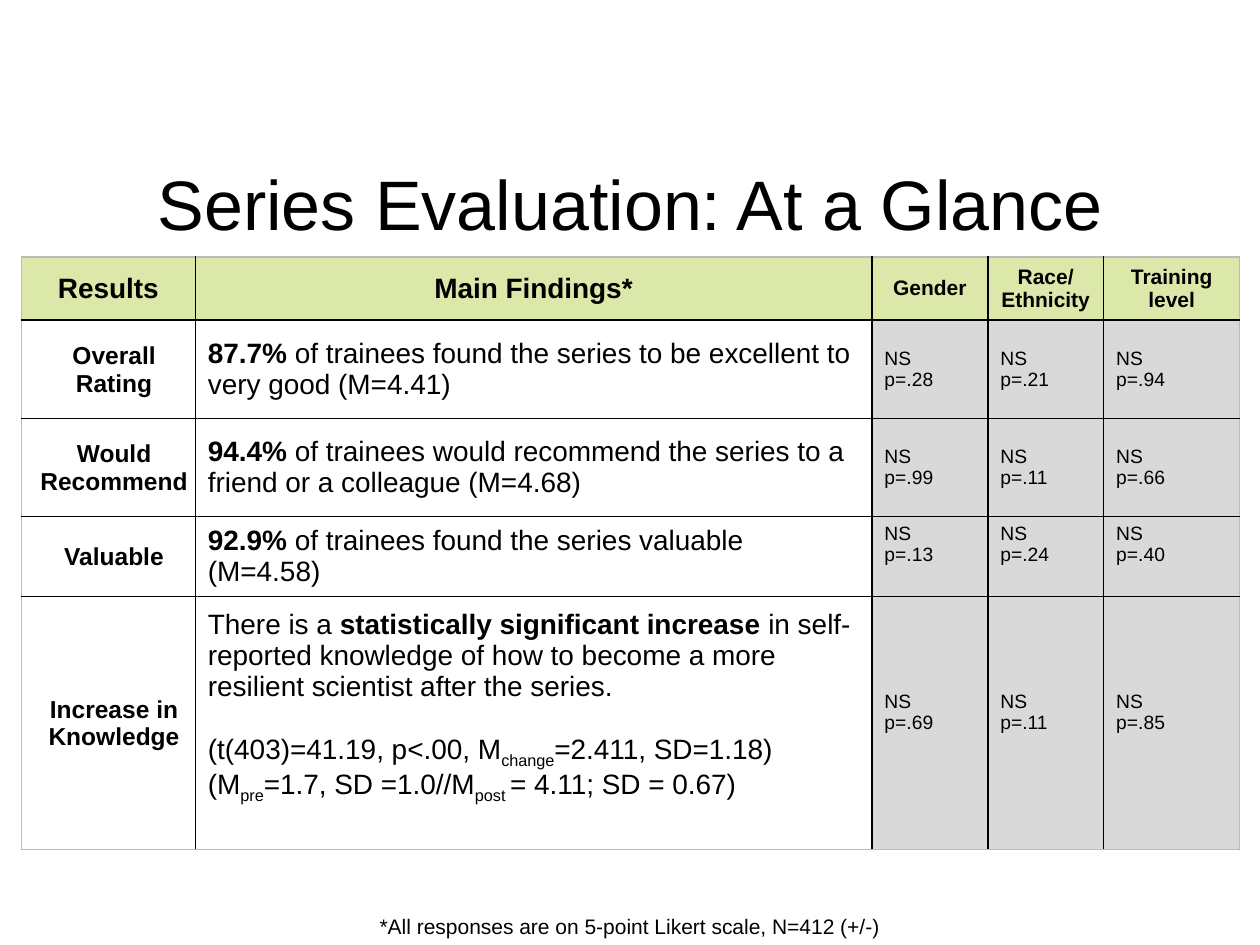
from lxml.etree import SubElement
from pptx import Presentation
from pptx.dml.color import RGBColor
from pptx.enum.text import MSO_ANCHOR, PP_ALIGN
from pptx.oxml.ns import qn
from pptx.util import Inches, Pt

BLACK = RGBColor(0x00, 0x00, 0x00)
FRAME_GREY = RGBColor(0xBB, 0xBB, 0xBB)
HEADER_GREEN = RGBColor(0xDB, 0xE8, 0xAA)
CELL_GREY = RGBColor(0xD9, 0xD9, 0xD9)

GRID_COLUMNS, GRID_ROWS = 100, 75
BOLD, SUBSCRIPT = "bold", "subscript"

COLUMN_WIDTHS = [13.8, 53.7, 9.2, 9.2, 10.8]
ROW_HEIGHTS = [4.8, 7.8, 7.8, 6.1, 19]
HEADERS = [(["Results"], 16), (["Main Findings*"], 16), (["Gender"], 12),
           (["Race/", "Ethnicity"], 12), (["Training level"], 12)]

# Label, finding as paragraphs of (text, style) spans, p values by group
RESULTS = [
    ("Overall Rating",
     [[("87.7% ", BOLD),
       ("of trainees found the series to be excellent to very good (M=4.41)", None)]],
     [".28", ".21", ".94"]),
    ("Would Recommend",
     [[("94.4% ", BOLD),
       ("of trainees would recommend the series to a friend or a colleague (M=4.68)", None)]],
     [".99", ".11", ".66"]),
    ("Valuable",
     [[("92.9% ", BOLD), ("of trainees found the series valuable (M=4.58)", None)]],
     [".13", ".24", ".40"]),
    ("Increase in Knowledge",
     [[("There is a ", None), ("statistically significant increase ", BOLD),
       ("in self-reported knowledge of how to become a more resilient scientist "
        "after the series.", None)],
      [("(t(403)=41.19, p<.00, M", None), ("change", SUBSCRIPT),
       ("=2.411, SD=1.18)", None)],
      [("(M", None), ("pre", SUBSCRIPT), ("=1.7, SD =1.0//M", None),
       ("post ", SUBSCRIPT), ("= 4.11; SD = 0.67)", None)]],
     [".69", ".11", ".85"]),
]


def plain(lines, style=None):
    """Turn lines into paragraphs of one span each."""
    return [[(line, style)] for line in lines]


class SlideBuilder:
    """Holds the deck's style and current page; lengths are grid units."""

    font_name = "Arial"
    text_color = BLACK

    def __init__(self, deck):
        self.page = deck.slides.add_slide(deck.slide_layouts[6])
        self.column = deck.slide_width / GRID_COLUMNS
        self.row = deck.slide_height / GRID_ROWS

    def place(self, left, top, width, height):
        return (round(left * self.column), round(top * self.row),
                round(width * self.column), round(height * self.row))

    def fill_text(self, frame, paragraphs, size, align=PP_ALIGN.LEFT):
        for index, spans in enumerate(paragraphs):
            para = frame.add_paragraph() if index else frame.paragraphs[0]
            para.alignment = align
            for text, style in spans:
                span = para.add_run()
                span.text = text
                values = {"name": self.font_name, "size": Pt(size), "bold": style == BOLD}
                for name, value in values.items():
                    setattr(span.font, name, value)
                span.font.color.rgb = self.text_color
                if style == SUBSCRIPT:
                    span.font._element.set("baseline", "-25000")

    def text(self, area, content, size, bottom=0.05):
        box = self.page.shapes.add_textbox(*self.place(*area))
        frame = box.text_frame
        values = {"word_wrap": True, "vertical_anchor": MSO_ANCHOR.MIDDLE,
                  "margin_bottom": Inches(bottom)}
        for name, value in values.items():
            setattr(frame, name, value)
        self.fill_text(frame, plain([content]), size, PP_ALIGN.CENTER)

    def table(self, left, top, widths, heights):
        area = self.place(left, top, sum(widths), sum(heights))
        grid = self.page.shapes.add_table(len(heights), len(widths), *area).table
        grid.first_row = grid.horz_banding = False
        for column, width in zip(grid.columns, widths):
            column.width = round(width * self.column)
        for row, height in zip(grid.rows, heights):
            row.height = round(height * self.row)
        last_row, last_column = len(heights) - 1, len(widths) - 1
        for r in range(len(heights)):
            for c in range(len(widths)):
                outer = {"lnL": c == 0, "lnR": c == last_column,
                         "lnT": r == 0, "lnB": r == last_row}
                self.borders(grid.cell(r, c), outer)
        return grid

    def borders(self, cell, outer):
        """Draw grey frame edges where outer is true and black rules elsewhere."""
        properties = cell._tc.get_or_add_tcPr()
        for edge, is_outer in outer.items():
            line = SubElement(properties, qn(f"a:{edge}"), w=str(Pt(1)))
            fill = SubElement(line, qn("a:solidFill"))
            SubElement(fill, qn("a:srgbClr"), val=str(FRAME_GREY if is_outer else BLACK))

    def cell(self, cell, paragraphs, size, align=PP_ALIGN.LEFT, color=None, **layout):
        if color is None:
            cell.fill.background()
        else:
            cell.fill.solid()
            cell.fill.fore_color.rgb = color
        for name, value in {"vertical_anchor": MSO_ANCHOR.MIDDLE, **layout}.items():
            setattr(cell, name, value)
        self.fill_text(cell.text_frame, paragraphs, size, align)


def main():
    deck = Presentation()
    deck.slide_width, deck.slide_height = Inches(10), Inches(7.5)
    builder = SlideBuilder(deck)

    builder.text((5, 11.7, 90, 10.8), "Series Evaluation: At a Glance", 40, bottom=0.25)

    grid = builder.table(1.7, 20.4, COLUMN_WIDTHS, ROW_HEIGHTS)
    for c, (lines, size) in enumerate(HEADERS):
        builder.cell(grid.cell(0, c), plain(lines, BOLD), size, PP_ALIGN.CENTER, HEADER_GREEN)

    label_margins = {"margin_left": Inches(0.1), "margin_right": Inches(0.01),
                     "margin_top": Inches(0.01), "margin_bottom": 0}
    finding_layouts = {"Increase in Knowledge": {"margin_bottom": Inches(0.3)}}
    value_layouts = {"Valuable": {"vertical_anchor": MSO_ANCHOR.TOP},
                     "Increase in Knowledge": {"margin_bottom": Inches(0.22)}}
    for r, (label, finding, values) in enumerate(RESULTS, start=1):
        builder.cell(grid.cell(r, 0), plain([label], BOLD), 14, PP_ALIGN.CENTER,
                     **label_margins)
        finding_cell = grid.cell(r, 1)
        builder.cell(finding_cell, finding, 16, **finding_layouts.get(label, {}))
        if len(finding) > 1:
            finding_cell.text_frame.paragraphs[1].space_before = Pt(18)
        for c, value in enumerate(values, start=2):
            builder.cell(grid.cell(r, c), plain(["NS", f"p={value}"]), 11,
                         color=CELL_GREY, **value_layouts.get(label, {}))

    builder.text((5, 72, 90, 3), "*All responses are on 5-point Likert scale, N=412 (+/-)", 12)
    deck.save("out.pptx")


if __name__ == "__main__":
    main()
